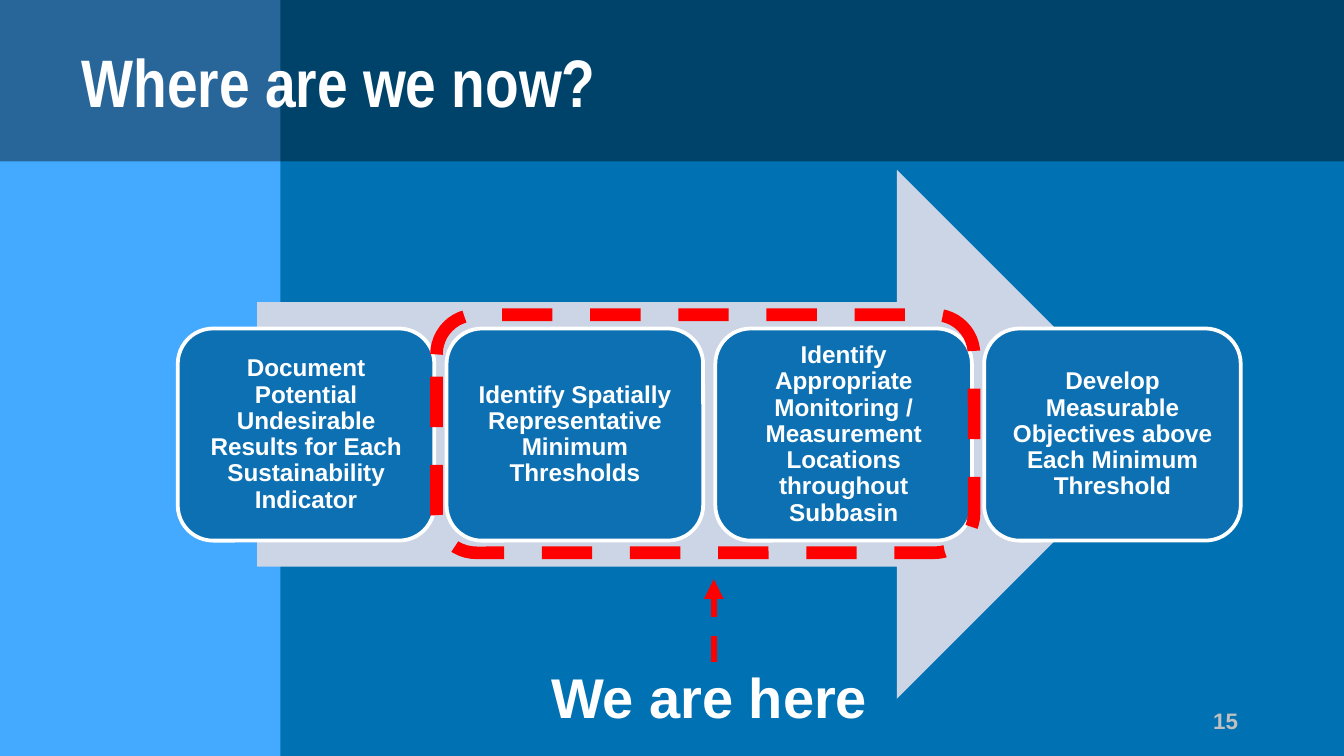
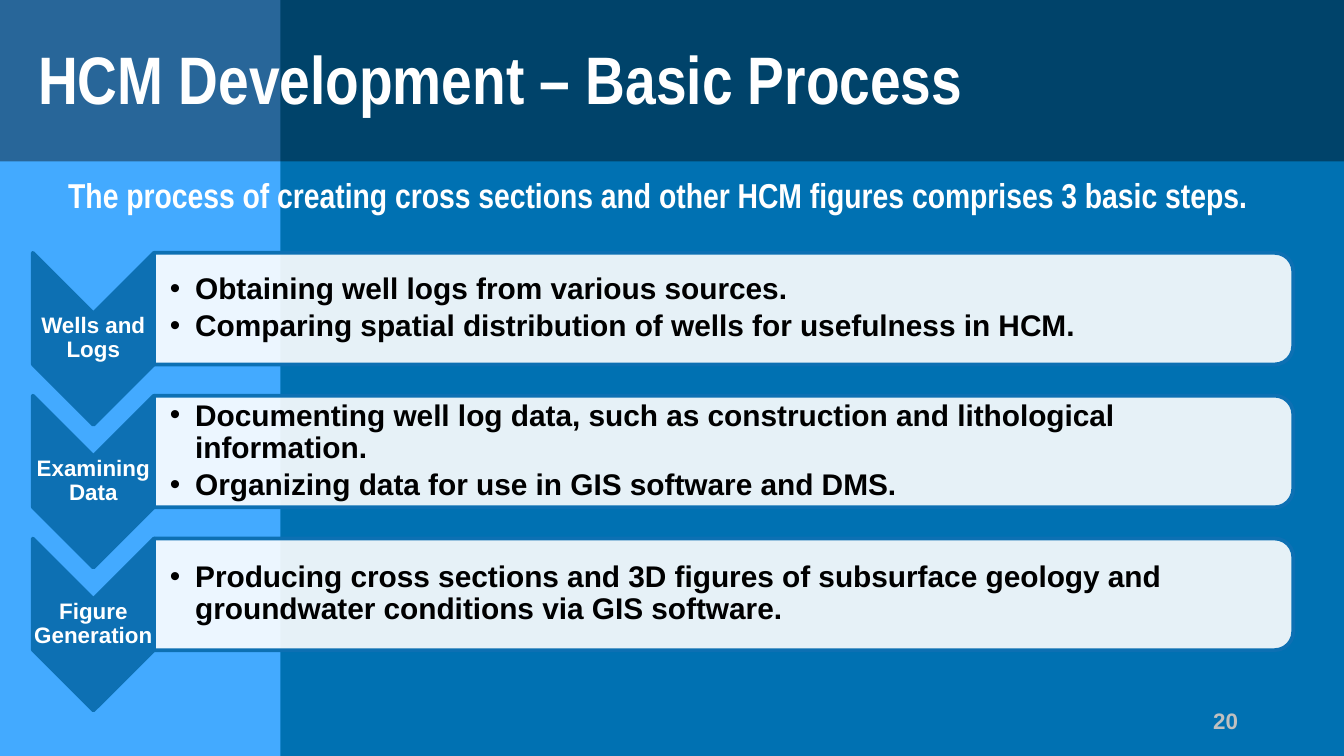
from dataclasses import dataclass

from lxml import etree
from pptx import Presentation
from pptx import util as u
from pptx.dml.color import RGBColor
from pptx.enum import dml, shapes, text
from pptx.oxml.ns import qn

# Content
STEPS = {
    "title": "Where are we now?",
    "number": "15",
    "cards": [
        "Document Potential Undesirable Results for Each Sustainability Indicator",
        "Identify Spatially Representative Minimum Thresholds",
        "Identify Appropriate Monitoring / Measurement Locations throughout Subbasin",
        "Develop Measurable Objectives above Each Minimum Threshold",
    ],
    "here": "We are here",
}
PROCESS = {
    "title": "HCM Development – Basic Process",
    "number": "20",
    "lead": "The process of creating cross sections and other HCM figures "
            "comprises 3 basic steps.",
    "rows": [
        ("Wells and Logs", [
            "Obtaining well logs from various sources.",
            "Comparing spatial distribution of wells for usefulness in HCM.",
        ]),
        ("Examining Data", [
            "Documenting well log data, such as construction and lithological information.",
            "Organizing data for use in GIS software and DMS.",
        ]),
        ("Figure Generation", [
            "Producing cross sections and 3D figures of subsurface geology and "
            "groundwater conditions via GIS software.",
        ]),
    ],
}


# Theme: colours, fonts and type sizes
@dataclass(frozen=True)
class Theme:
    back: str = "0071B2"
    side: str = "43AAFF"
    fill: str = "0D70B3"
    arrow: str = "CCD5E5"
    mark: str = "FF0000"
    white: str = "FFFFFF"
    black: str = "000000"
    grey: str = "C0C0C0"
    sans: str = "Arial"
    slim: str = "Arial Narrow"
    head: float = 36
    call: float = 30
    lead: float = 18.5
    list: float = 16
    card: float = 13
    small: float = 12


T = Theme()
WIDE, HIGH = 25.4, 14.29
KIND = shapes.MSO_SHAPE
ALIGN = text.PP_ALIGN
MID = text.MSO_ANCHOR.MIDDLE


# Helpers
def rgb(code):
    return RGBColor.from_string(code)


def cms(box):
    return [u.Cm(v) for v in box]


def turn(x, y, w, h):
    """Frame that covers the given box once it is rotated by 90 degrees."""
    return x + (w - h) / 2, y + (h - w) / 2, h, w


def draw(slide, kind, box, fill=None, line=None, width=2, alpha=None, rot=0):
    shape = slide.shapes.add_shape(kind, *cms(box))
    shape.shadow.inherit = False
    shape.rotation = rot
    if fill:
        shape.fill.solid()
        shape.fill.fore_color.rgb = rgb(fill)
    else:
        shape.fill.background()
    if alpha:
        color = shape.fill._xPr.find(".//" + qn("a:srgbClr"))
        etree.SubElement(color, qn("a:alpha"), val=str(alpha * 1000))
    if line:
        shape.line.color.rgb = rgb(line)
        shape.line.width = u.Pt(width)
    else:
        shape.line.fill.background()
    return shape


def write(shape, lines, size, color=T.white, face=T.sans, align=ALIGN.LEFT,
          anchor=MID, pad=(0.25, 0.13), space=None, after=None, bullet=False):
    frame = shape.text_frame
    frame.word_wrap = True
    frame.auto_size = text.MSO_AUTO_SIZE.NONE
    frame.vertical_anchor = anchor
    frame.margin_left = frame.margin_right = u.Cm(pad[0])
    frame.margin_top = frame.margin_bottom = u.Cm(pad[1])
    for i, line in enumerate(lines):
        para = frame.add_paragraph() if i else frame.paragraphs[0]
        para.text = line
        if bullet:
            props = para._p.get_or_add_pPr()
            props.set("marL", str(u.Cm(0.48)))
            props.set("indent", str(-u.Cm(0.48)))
            etree.SubElement(props, qn("a:buFont"), typeface=face)
            etree.SubElement(props, qn("a:buChar"), char="•")
        para.alignment = align
        if space:
            para.line_spacing = space
        if after:
            para.space_after = u.Pt(after)
        font = para.font
        font.name, font.size, font.bold = face, u.Pt(size), True
        font.color.rgb = rgb(color)


def label(slide, box, lines, size, **style):
    write(slide.shapes.add_textbox(*cms(box)), lines, size, **style)


def start(deck, data, spot):
    """Add a slide with its title and number."""
    slide = deck.slides.add_slide(deck.slide_layouts[5])
    title = slide.shapes.title
    title.left, title.top, title.width, title.height = cms(spot)
    write(title, [data["title"]], T.head, face=T.slim, pad=(0.1, 0.05))
    label(slide, (17.93, 13.23, 5.72, 0.76), [data["number"]], T.small,
          color=T.grey, align=ALIGN.RIGHT, anchor=text.MSO_ANCHOR.TOP)
    return slide


def dress(deck, slide):
    """Give the shared layout its background and bands."""
    fill = deck.slide_master.background.fill
    fill.solid()
    fill.fore_color.rgb = rgb(T.back)
    side = draw(slide, KIND.RECTANGLE, (0, 0, 5.3, HIGH), T.side)
    top = draw(slide, KIND.RECTANGLE, (0, 0, WIDE, 3.05), T.black, alpha=40)
    tree = deck.slide_layouts[5].shapes.element
    for place, band in enumerate((side, top), 2):
        tree.insert(place, band.element)


# Slide with the four steps on an arrow
def steps(slide, data):
    draw(slide, KIND.RIGHT_ARROW, (4.86, 3.21, 17.09, 10), T.arrow)
    for i, card in enumerate(data["cards"]):
        box = draw(slide, KIND.ROUNDED_RECTANGLE,
                   (3.36 + 5.08 * i, 6.21, 4.85, 4.01), T.fill, T.white)
        write(box, [card], T.card, align=ALIGN.CENTER, pad=(0.13, 0.13),
              space=0.9, after=5.5)

    # Marker around the current steps
    dash = dml.MSO_LINE.DASH
    frame = draw(slide, KIND.ROUNDED_RECTANGLE, (8.25, 5.95, 10.16, 4.5),
                 line=T.mark, width=6.75)
    frame.line.dash_style = dash
    label(slide, (9.19, 12.37, 8.43, 1.57), [data["here"]], T.call,
          align=ALIGN.CENTER, pad=(0.15, 0.15))
    link = slide.shapes.add_connector(shapes.MSO_CONNECTOR.STRAIGHT,
                                      *cms((13.49, 12.52, 13.49, 10.95)))
    link.line.color.rgb = rgb(T.mark)
    link.line.width = u.Pt(3.5)
    link.line.dash_style = dash
    etree.SubElement(link.line._get_or_add_ln(), qn("a:tailEnd"), type="triangle")
    etree.SubElement(link.element.spPr, qn("a:effectLst"))


# Slide with chevrons and bullet panels
def process(slide, data):
    label(slide, (1.04, 3.16, 23.83, 1.09), [data["lead"]], T.lead,
          face=T.slim, anchor=text.MSO_ANCHOR.TOP)
    for i, (name, items) in enumerate(data["rows"]):
        top = 4.78 + 2.7 * i
        draw(slide, KIND.CHEVRON, turn(0.62, top, 2.29, 3.25),
             T.fill, T.fill, rot=90)
        # The label is a little wider than its chevron, so no word breaks
        label(slide, (0.52, top + 1.12, 2.49, 0.99), [name], T.small,
              align=ALIGN.CENTER, pad=(0, 0.03), space=0.9, after=5)
        draw(slide, KIND.ROUND_2_SAME_RECTANGLE, turn(2.91, top, 21.53, 2.11),
             T.white, T.fill, alpha=90, rot=90)
        label(slide, (2.91, top + 0.1, 21.53, 1.9), items, T.list,
              color=T.black, pad=(0.3, 0.03), space=0.9, after=2.8, bullet=True)


def main():
    deck = Presentation()
    deck.slide_width, deck.slide_height = cms((WIDE, HIGH))
    first = start(deck, STEPS, (1.44, 0.33, 16.61, 2.39))
    dress(deck, first)
    steps(first, STEPS)
    process(start(deck, PROCESS, (0.62, 0.28, 17.96, 2.39)), PROCESS)
    deck.save("out.pptx")


if __name__ == "__main__":
    main()
